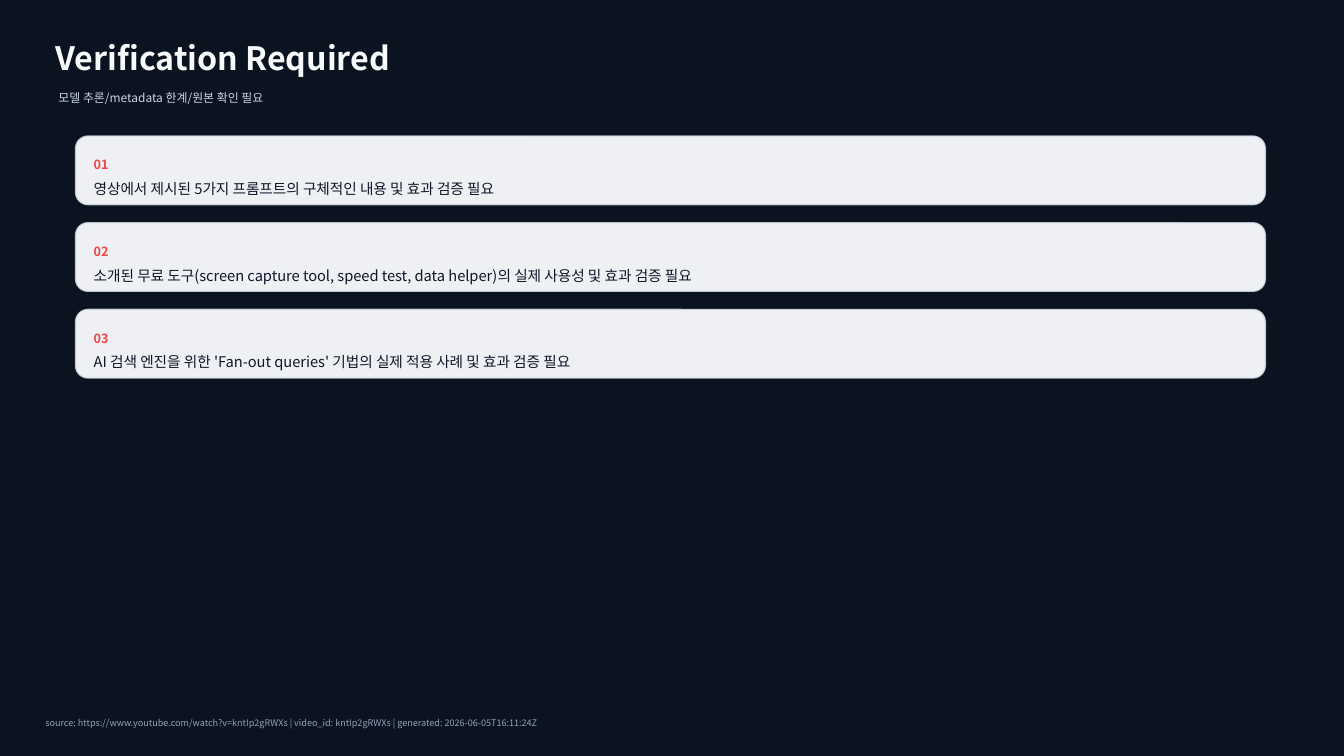
from lxml.etree import SubElement
from pptx import Presentation
from pptx.dml.color import RGBColor
from pptx.enum.shapes import MSO_SHAPE
from pptx.enum.text import MSO_ANCHOR
from pptx.oxml.ns import qn
from pptx.util import Inches, Pt

FONT = "Noto Sans CJK KR"
CARD_LEFT, CARD_TOP, CARD_WIDTH, CARD_HEIGHT = 0.75, 1.35, 11.8, 0.68
CARD_PITCH = 0.86
CARD_PADDING = 0.18


def paint(color_format, color, opacity=100):
    """Set a solid fill's colour from a hex string, with opacity in percent."""
    color_format.solid()
    color_format.fore_color.rgb = RGBColor.from_string(color)
    if opacity < 100:
        value = color_format._xPr.find(f"{qn('a:solidFill')}/{qn('a:srgbClr')}")
        SubElement(value, qn("a:alpha"), val=str(opacity * 1000))


def add_text(left, top, width, height, text, size, color, bold=False):
    box = page.shapes.add_textbox(Inches(left), Inches(top), Inches(width), Inches(height))
    frame = box.text_frame
    frame.word_wrap = True
    frame.vertical_anchor = MSO_ANCHOR.MIDDLE
    frame.margin_left = frame.margin_right = frame.margin_top = frame.margin_bottom = 0
    frame.text = text
    span = frame.paragraphs[0].runs[0]
    span.font.name = FONT
    span.font.size = Pt(size)
    span.font.bold = bold
    paint(span.font.fill, color)
    SubElement(span.font._element, qn("a:ea"), typeface=FONT)


deck = Presentation()
deck.slide_width, deck.slide_height = Inches(13.33), Inches(7.5)
page = deck.slides.add_slide(deck.slide_layouts[6])
paint(page.background.fill, "0B1220")

add_text(0.55, 0.35, 12, 0.45, "Verification Required", 23, "F8FAFC", bold=True)
add_text(0.58, 0.83, 11.5, 0.28, "모델 추론/metadata 한계/원본 확인 필요", 8.5, "CBD5E1")

checks = [
    "영상에서 제시된 5가지 프롬프트의 구체적인 내용 및 효과 검증 필요",
    "소개된 무료 도구(screen capture tool, speed test, data helper)의 실제 사용성 및 효과 검증 필요",
    "AI 검색 엔진을 위한 'Fan-out queries' 기법의 실제 적용 사례 및 효과 검증 필요",
]
text_left = CARD_LEFT + CARD_PADDING
text_width = CARD_WIDTH - 2 * CARD_PADDING
for index, check in enumerate(checks):
    top = CARD_TOP + index * CARD_PITCH
    card = page.shapes.add_shape(
        MSO_SHAPE.ROUNDED_RECTANGLE,
        Inches(CARD_LEFT), Inches(top), Inches(CARD_WIDTH), Inches(CARD_HEIGHT),
    )
    card.adjustments[0] = 0.18
    card.shadow.inherit = False
    paint(card.fill, "F8FAFC", opacity=96)
    card.line.width = Pt(1)
    paint(card.line.fill, "D7E0EA", opacity=80)
    add_text(text_left, top + 0.16, text_width, 0.25, f"{index + 1:02}", 9, "EF4444", bold=True)
    add_text(text_left, top + 0.5, text_width, 0.04, check, 10.5, "0F172A")

add_text(
    0.45, 7.05, 12.4, 0.25,
    "source: https://www.youtube.com/watch?v=kntIp2gRWXs | video_id: kntIp2gRWXs"
    " | generated: 2026-06-05T16:11:24Z",
    6.5, "94A3B8",
)

deck.save("out.pptx")
